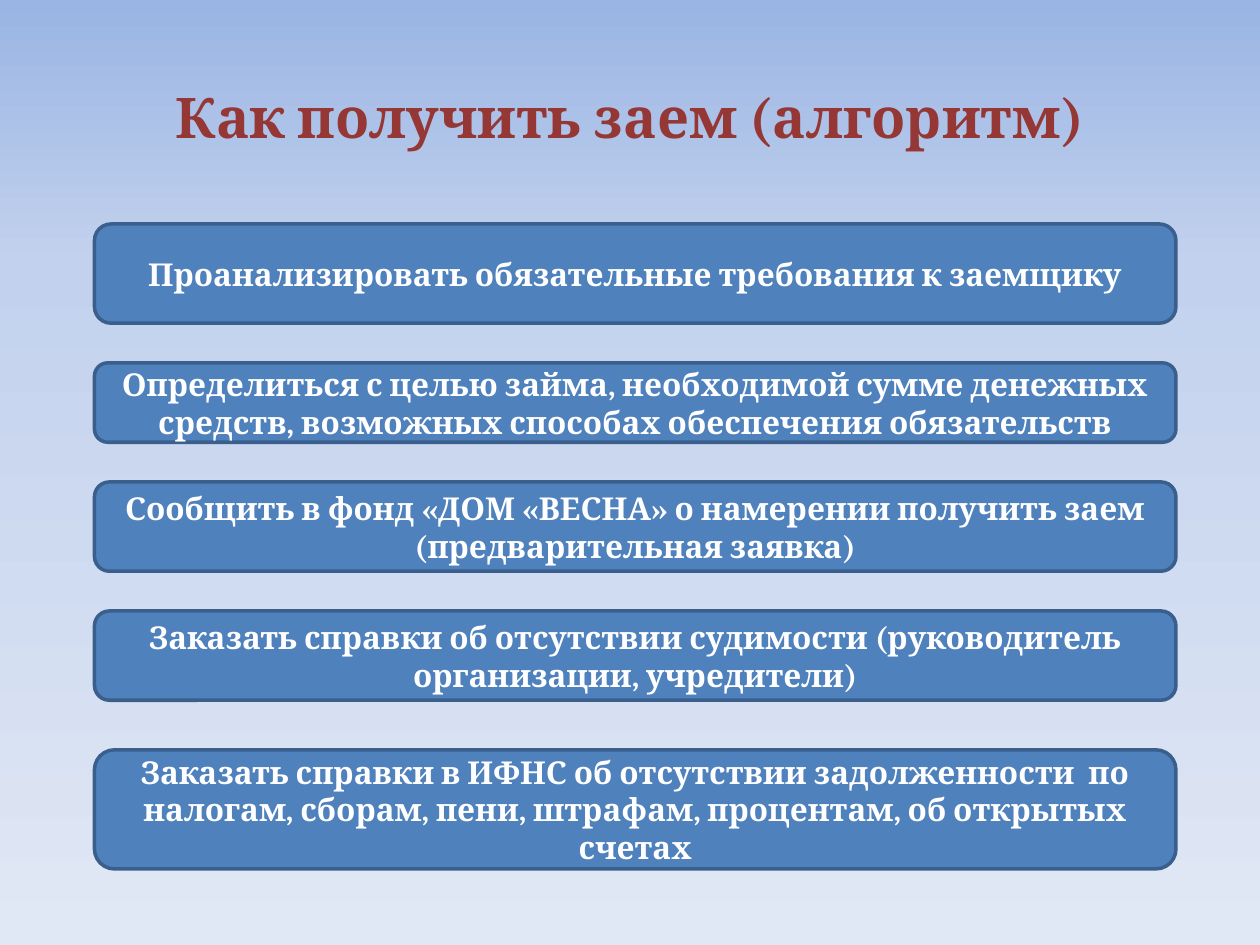
import copy
from dataclasses import dataclass

import pptx
import pptx.dml.color
import pptx.enum.shapes
import pptx.enum.text
import pptx.oxml.ns
import pptx.util

Pt = pptx.util.Pt
RGB = pptx.dml.color.RGBColor.from_string


@dataclass(frozen=True)
class Theme:
    font: str = "Cambria"
    title_size: float = 32
    step_size: float = 18
    title_color: str = "953735"
    step_color: str = "FFFFFF"
    step_fill: str = "4F81BD"
    step_border: str = "3A5F8C"
    border_width: float = 2
    backdrop: tuple = ((0, "9AB5E4"), (0.28, "C2D1ED"), (1, "E1E8F5"))


THEME = Theme()
GRID = 5.67
TITLE = "Как получить заем (алгоритм)"
STEPS = [
    ("Проанализировать обязательные требования к заемщику", 10, 4),
    ("Определиться с целью займа, необходимой сумме денежных средств, "
     "возможных способах обеспечения обязательств", 8, 4),
    ("Сообщить в фонд «ДОМ «ВЕСНА» о намерении получить заем "
     "(предварительная заявка)", 9, 4),
    ("Заказать справки об отсутствии судимости (руководитель "
     "организации, учредители)", 9, 5),
    ("Заказать справки в ИФНС об отсутствии задолженности  по налогам, "
     "сборам, пени, штрафам, процентам, об открытых счетах", 12, 0),
]


def apply(target, values):
    for name, value in values.items():
        setattr(target, name, value)


def write(frame, wording, size, color):
    apply(frame, {
        "text": wording,
        "word_wrap": True,
        "vertical_anchor": pptx.enum.text.MSO_ANCHOR.MIDDLE,
    })
    paragraph = frame.paragraphs[0]
    paragraph.alignment = pptx.enum.text.PP_ALIGN.CENTER
    font = paragraph.runs[0].font
    apply(font, {"name": THEME.font, "size": Pt(size), "bold": True})
    font.color.rgb = RGB(color)


def paint_backdrop(slide):
    fill = slide.background.fill
    fill.gradient()
    fill.gradient_angle = 270
    stop_list = next(slide.element.iter(pptx.oxml.ns.qn("a:gsLst")))
    stop_list.append(copy.deepcopy(stop_list[-1]))
    for stop, (position, color) in zip(fill.gradient_stops, THEME.backdrop):
        stop.position = position
        stop.color.rgb = RGB(color)


def place_title(slide, left, top, width, height):
    title = slide.shapes.title
    apply(title, {"left": Pt(left), "top": Pt(top),
                  "width": Pt(width), "height": Pt(height)})
    write(title.text_frame, TITLE, THEME.title_size, THEME.title_color)


def place_steps(slide, left, top, width):
    for wording, rows, gap_rows in STEPS:
        step = slide.shapes.add_shape(
            pptx.enum.shapes.MSO_SHAPE.ROUNDED_RECTANGLE,
            Pt(left), Pt(top), Pt(width), Pt(rows * GRID))
        step.shadow.inherit = False
        step.fill.solid()
        step.fill.fore_color.rgb = RGB(THEME.step_fill)
        step.line.color.rgb = RGB(THEME.step_border)
        step.line.width = Pt(THEME.border_width)
        write(step.text_frame, wording, THEME.step_size, THEME.step_color)
        top += (rows + gap_rows) * GRID


def main():
    deck = pptx.Presentation()
    apply(deck, {"slide_width": Pt(720), "slide_height": Pt(540)})
    slide = deck.slides.add_slide(deck.slide_layouts.get_by_name("Title Only"))
    paint_backdrop(slide)
    place_title(slide, 36, 21.6, 648, 90)
    place_steps(slide, 54, 128, 618)
    deck.save("out.pptx")


if __name__ == "__main__":
    main()
